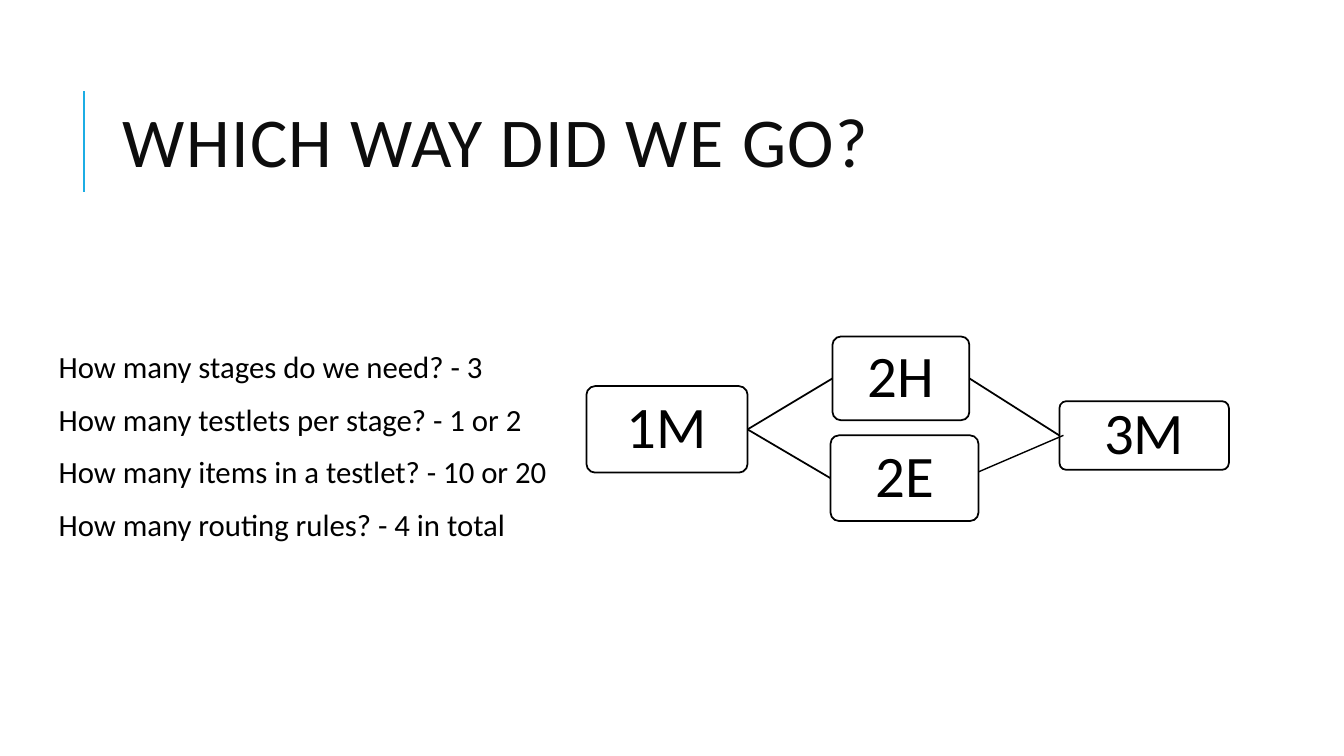
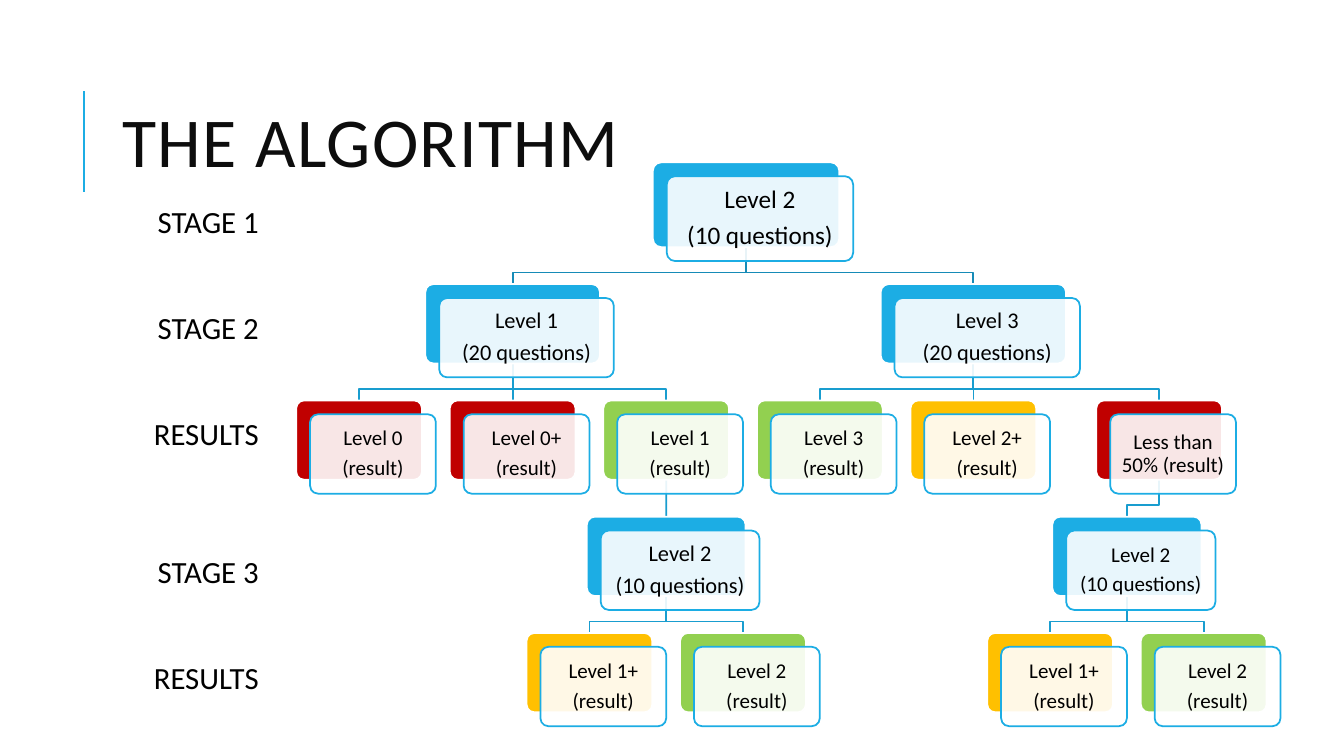
from lxml.etree import SubElement
from pptx import Presentation
from pptx.dml.color import RGBColor
from pptx.enum.shapes import MSO_CONNECTOR as Connector, MSO_SHAPE as Shape
from pptx.enum.text import MSO_ANCHOR as Anchor, PP_ALIGN as Align
from pptx.oxml.ns import qn
from pptx.util import Cm, Pt

FONT = "Calibri"
BLACK, WHITE, TITLE_COLOUR = "000000", "FFFFFF", "0D0D0D"
BLUE, RED, GREEN, AMBER = "1CADE4", "C00000", "92D050", "FFC000"
ROOT_LINK, LINK = "168BB7", "199DCF"

QUESTIONS = [
    "How many stages do we need? - 3",
    "How many testlets per stage? - 1 or 2",
    "How many items in a testlet? - 10 or 20",
    "How many routing rules? - 4 in total",
]
# name: left, top, width, height in cm
TESTLETS = {
    "1M": (14.78, 9.73, 4.06, 2.18),
    "2H": (20.98, 8.48, 3.45, 2.11),
    "2E": (20.93, 10.97, 3.73, 2.16),
    "3M": (26.7, 10.11, 4.27, 1.73),
}
ROUTES = [("1M", "2H"), ("1M", "2E"), ("2H", "3M")]
LAST_ROUTE = (24.66, 11.89, 26.8, 10.97)

# label, space before in points
STAGES = [("STAGE 1", 0), ("STAGE 2", 52), ("RESULTS", 52),
          ("STAGE 3", 75), ("RESULTS", 52)]
# key: parent, row, slot, width in cm, colour, text size, lines
NODES = {
    "start": (None, 0, 2.52, 4.7, BLUE, 18, ["Level 2", "(10 questions)"]),
    "low": ("start", 1, 1, 4.4, BLUE, 16, ["Level 1", "(20 questions)"]),
    "high": ("start", 1, 4, 4.67, BLUE, 16, ["Level 3", "(20 questions)"]),
    "low 0": ("low", 2, 0, 3.17, RED, 15, ["Level 0", "(result)"]),
    "low 0+": ("low", 2, 1, 3.17, RED, 15, ["Level 0+", "(result)"]),
    "low 1": ("low", 2, 2, 3.17, GREEN, 15, ["Level 1", "(result)"]),
    "high 3": ("high", 2, 3, 3.17, GREEN, 15, ["Level 3", "(result)"]),
    "high 2+": ("high", 2, 4, 3.17, AMBER, 15, ["Level 2+", "(result)"]),
    "high fail": ("high", 2, 5.21, 3.17, RED, 15, ["Less than 50% (result)"]),
    "low retry": ("low 1", 3, 2, 4, BLUE, 16, ["Level 2", "(10 questions)"]),
    "high retry": ("high fail", 3, 5, 3.76, BLUE, 15, ["Level 2", "(10 questions)"]),
    "low 1+": ("low retry", 4, 1.5, 3.17, AMBER, 15, ["Level 1+", "(result)"]),
    "low 2": ("low retry", 4, 2.5, 3.17, GREEN, 15, ["Level 2", "(result)"]),
    "high 1+": ("high retry", 4, 4.5, 3.17, AMBER, 15, ["Level 1+", "(result)"]),
    "high 2": ("high retry", 4, 5.5, 3.17, GREEN, 15, ["Level 2", "(result)"]),
}
FIRST_SLOT, SLOT_PITCH = 9.05, 3.87
ROOT_TOP, ROOT_HEIGHT = 4.09, 2.14
SECOND_ROW_TOP, ROW_PITCH, ROW_HEIGHT = 7.16, 2.93, 2
CARD_OFFSET, BEND_ABOVE_CHILD = 0.35, 0.29


def colour(value):
    return RGBColor.from_string(value)


def write_text(shape, lines, size, color=BLACK, align=Align.LEFT,
               anchor=Anchor.TOP, inset=0.13, line_spacing=0.9,
               before=(), after=0, tracking=None):
    """Fill a shape with one paragraph per line; before lists each one's gap."""
    frame = shape.text_frame
    frame.word_wrap = True
    frame.vertical_anchor = anchor
    frame.margin_left = frame.margin_right = Cm(inset)
    frame.margin_top = frame.margin_bottom = Cm(inset)
    for index, line in enumerate(lines):
        paragraph = frame.add_paragraph() if index else frame.paragraphs[0]
        paragraph.alignment = align
        paragraph.line_spacing = line_spacing
        paragraph.space_before = Pt(before[index] if before else 0)
        paragraph.space_after = Pt(after)
        run = paragraph.add_run()
        run.text = line
        run.font.name, run.font.size = FONT, Pt(size)
        run.font.color.rgb = colour(color)
        if tracking:
            run.font._element.set("spc", str(tracking))


def add_text(slide, box, lines, size, **text_format):
    shape = slide.shapes.add_textbox(*map(Cm, box))
    write_text(shape, lines, size, **text_format)


def add_line(slide, ends, color, width):
    line = slide.shapes.add_connector(Connector.STRAIGHT, *map(Cm, ends))
    line.line.color.rgb = colour(color)
    line.line.width = Pt(width)
    SubElement(line._element.spPr, qn("a:effectLst"))
    return line


def add_rounded_box(slide, box, line, fill=None, opacity=100):
    shape = slide.shapes.add_shape(Shape.ROUNDED_RECTANGLE, *map(Cm, box))
    shape.adjustments[0] = 0.1
    shape.shadow.inherit = False
    shape.line.color.rgb = colour(line)
    shape.line.width = Pt(1.25)
    if fill is None:
        shape.fill.background()
    else:
        shape.fill.solid()
        shape.fill.fore_color.rgb = colour(fill)
    if opacity < 100:
        color_element = shape._element.spPr.find(f"{qn('a:solidFill')}/{qn('a:srgbClr')}")
        SubElement(color_element, qn("a:alpha"), val=str(opacity * 1000))
    return shape


def add_titled_slide(presentation, title):
    slide = presentation.slides.add_slide(presentation.slide_layouts[6])
    add_line(slide, (2.12, 4.83, 2.12, 2.29), BLUE, 1.5)
    add_text(slide, (2.84, 1.63, 27, 4.17), [title], 50, color=TITLE_COLOUR,
             anchor=Anchor.MIDDLE, inset=0.25, line_spacing=0.8, tracking=100)
    return slide


def glue(line, start, start_site, end, end_site):
    line.begin_connect(start, start_site)
    line.end_connect(end, end_site)


def node_place(key):
    """Return centre, top and height of a node's back card in cm."""
    _, row, slot, *_ = NODES[key]
    centre = FIRST_SLOT + slot * SLOT_PITCH
    if row == 0:
        return centre, ROOT_TOP, ROOT_HEIGHT
    return centre, SECOND_ROW_TOP + (row - 1) * ROW_PITCH, ROW_HEIGHT


def add_bent_link(slide, points, color):
    start, *others = [(Cm(x), Cm(y)) for x, y in points]
    builder = slide.shapes.build_freeform(*start, scale=1.0)
    builder.add_line_segments(others, close=False)
    link = builder.convert_to_shape()
    link.shadow.inherit = False
    link.fill.background()
    link.line.color.rgb = colour(color)
    link.line.width = Pt(1.25)


def add_links(slide):
    """Draw all links and return the straight ones with their two nodes."""
    straight = []
    for key, (parent, *_) in NODES.items():
        if parent is None:
            continue
        x, y, height = node_place(parent)
        child_x, child_y, _ = node_place(key)
        bottom, bend = y + height, child_y - BEND_ABOVE_CHILD
        if x == child_x:
            line = add_line(slide, (x, bottom, x, child_y), LINK, 1.25)
            straight.append((line, parent, key))
        else:
            points = [(x, bottom), (x, bend), (child_x, bend), (child_x, child_y)]
            add_bent_link(slide, points, ROOT_LINK if parent == "start" else LINK)
    return straight


def add_node(slide, key):
    """Draw the coloured back card and the text card; return the back card."""
    _, _, _, width, fill, size, lines = NODES[key]
    centre, top, height = node_place(key)
    left = centre - width / 2
    back = add_rounded_box(slide, (left, top, width, height), WHITE, fill)
    front = add_rounded_box(slide, (left + CARD_OFFSET, top + CARD_OFFSET, width, height),
                            BLUE, WHITE, opacity=90)
    write_text(front, lines, size, align=Align.CENTER, anchor=Anchor.MIDDLE,
               inset=0.2, after=round(size * 0.35, 1))
    return back


def build_route_slide(presentation):
    slide = add_titled_slide(presentation, "WHICH WAY DID WE GO?")
    add_text(slide, (1.35, 8.73, 13, 5.5), QUESTIONS, 22,
             before=[0, 12, 12, 12], after=2)
    add_line(slide, LAST_ROUTE, BLACK, 1)
    boxes = {}
    for name, box in TESTLETS.items():
        boxes[name] = add_rounded_box(slide, box, BLACK)
        write_text(boxes[name], [name], 42, align=Align.CENTER,
                   anchor=Anchor.MIDDLE)
    for start, end in ROUTES:
        line = add_line(slide, (0, 0, 1, 1), BLACK, 1.25)
        glue(line, boxes[start], 3, boxes[end], 1)


def build_algorithm_slide(presentation):
    slide = add_titled_slide(presentation, "THE ALGORITHM")
    straight = add_links(slide)
    cards = {key: add_node(slide, key) for key in NODES}
    for line, parent, child in straight:
        glue(line, cards[parent], 2, cards[child], 0)
    labels, gaps = zip(*STAGES)
    add_text(slide, (2.84, 5.08, 3.81, 13.23), labels, 22,
             align=Align.RIGHT, before=gaps)


def main():
    presentation = Presentation()
    presentation.slide_width, presentation.slide_height = Cm(33.87), Cm(19.05)
    build_route_slide(presentation)
    build_algorithm_slide(presentation)
    presentation.save("out.pptx")


if __name__ == "__main__":
    main()
